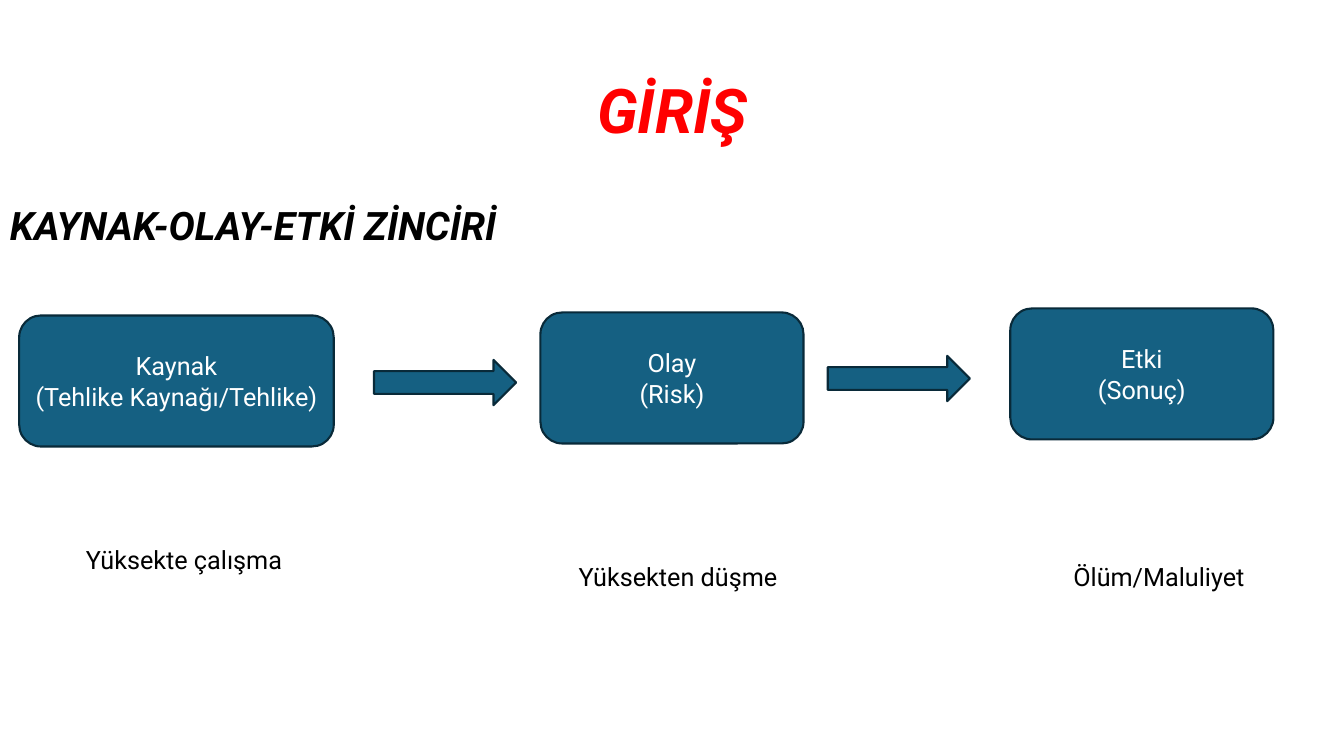
from typing import NamedTuple

from pptx import Presentation
from pptx.dml import color
from pptx.enum import shapes, text
from pptx.util import Inches, Pt

FONT = "Roboto"
BLACK, WHITE, RED = "000000", "FFFFFF", "FF0000"
TEAL, NAVY = "156082", "092A39"
BOX_HEIGHT = 1.3
ARROW_WIDTH, ARROW_HEIGHT = 1.41, 0.45
EXAMPLE_WIDTH, EXAMPLE_HEIGHT = 2.97, 1.45


class Style(NamedTuple):
    size: int
    hue: str
    strong: bool = False  # bold and italic
    align: text.PP_ALIGN = text.PP_ALIGN.CENTER
    anchor: text.MSO_ANCHOR = text.MSO_ANCHOR.MIDDLE
    spacing: float = 0.9
    before: int = 0


class Link(NamedTuple):
    """One link of the chain: its box and the example below it."""
    left: float
    top: float
    width: float
    lines: list[str]
    example: str
    example_left: float
    example_top: float


TITLE = Style(44, RED, strong=True)
HEADING = Style(28, BLACK, strong=True, align=text.PP_ALIGN.LEFT,
                anchor=text.MSO_ANCHOR.TOP, before=10)
BOX = Style(18, WHITE, spacing=1.0)
EXAMPLE = Style(18, BLACK)

CHAIN = [
    Link(0.19, 3.13, 3.12, ["Kaynak", "(Tehlike Kaynağı/Tehlike)"],
         "Yüksekte çalışma", 0.34, 4.84),
    Link(5.36, 3.1, 2.61, ["Olay", "(Risk)"], "Yüksekten düşme", 5.24, 5.01),
    Link(10.02, 3.06, 2.61, ["Etki", "(Sonuç)"], "Ölüm/Maluliyet", 10.01, 5.01),
]
ARROWS = [(3.71, 3.57), (8.21, 3.53)]


def rgb(value: str) -> color.RGBColor:
    return color.RGBColor.from_string(value)


def write(shape, lines: list[str], style: Style) -> None:
    frame = shape.text_frame
    frame.word_wrap = True
    frame.vertical_anchor = style.anchor
    for index, line in enumerate(lines):
        para = frame.add_paragraph() if index else frame.paragraphs[0]
        para.alignment = style.align
        para.line_spacing = style.spacing
        para.space_before = Pt(style.before)
        span = para.add_run()
        span.text = line
        span.font.name = FONT
        span.font.size = Pt(style.size)
        span.font.bold = span.font.italic = style.strong
        span.font.color.rgb = rgb(style.hue)


def add_text(page, left: float, top: float, width: float, height: float,
             line: str, style: Style) -> None:
    box = page.shapes.add_textbox(*map(Inches, (left, top, width, height)))
    write(box, [line], style)


def add_figure(page, kind: shapes.MSO_SHAPE, left: float, top: float,
               width: float, height: float):
    figure = page.shapes.add_shape(kind, *map(Inches, (left, top, width, height)))
    figure.shadow.inherit = False
    figure.fill.solid()
    figure.fill.fore_color.rgb = rgb(TEAL)
    figure.line.color.rgb = rgb(NAVY)
    figure.line.width = Pt(1.5)
    return figure


def main() -> None:
    deck = Presentation()
    deck.slide_width, deck.slide_height = Inches(13.33), Inches(7.5)
    page = deck.slides.add_slide(deck.slide_layouts[6])

    # Title and heading
    add_text(page, 0.92, 0.4, 11.5, 1.45, "GİRİŞ", TITLE)
    add_text(page, 0, 2, 13.33, 4.76, "KAYNAK-OLAY-ETKİ ZİNCİRİ", HEADING)

    # Chain boxes with their examples
    for link in CHAIN:
        box = add_figure(page, shapes.MSO_SHAPE.ROUNDED_RECTANGLE,
                         link.left, link.top, link.width, BOX_HEIGHT)
        write(box, link.lines, BOX)
        add_text(page, link.example_left, link.example_top,
                 EXAMPLE_WIDTH, EXAMPLE_HEIGHT, link.example, EXAMPLE)

    # Arrows between the boxes
    for left, top in ARROWS:
        add_figure(page, shapes.MSO_SHAPE.RIGHT_ARROW,
                   left, top, ARROW_WIDTH, ARROW_HEIGHT)

    deck.save("out.pptx")


if __name__ == "__main__":
    main()
